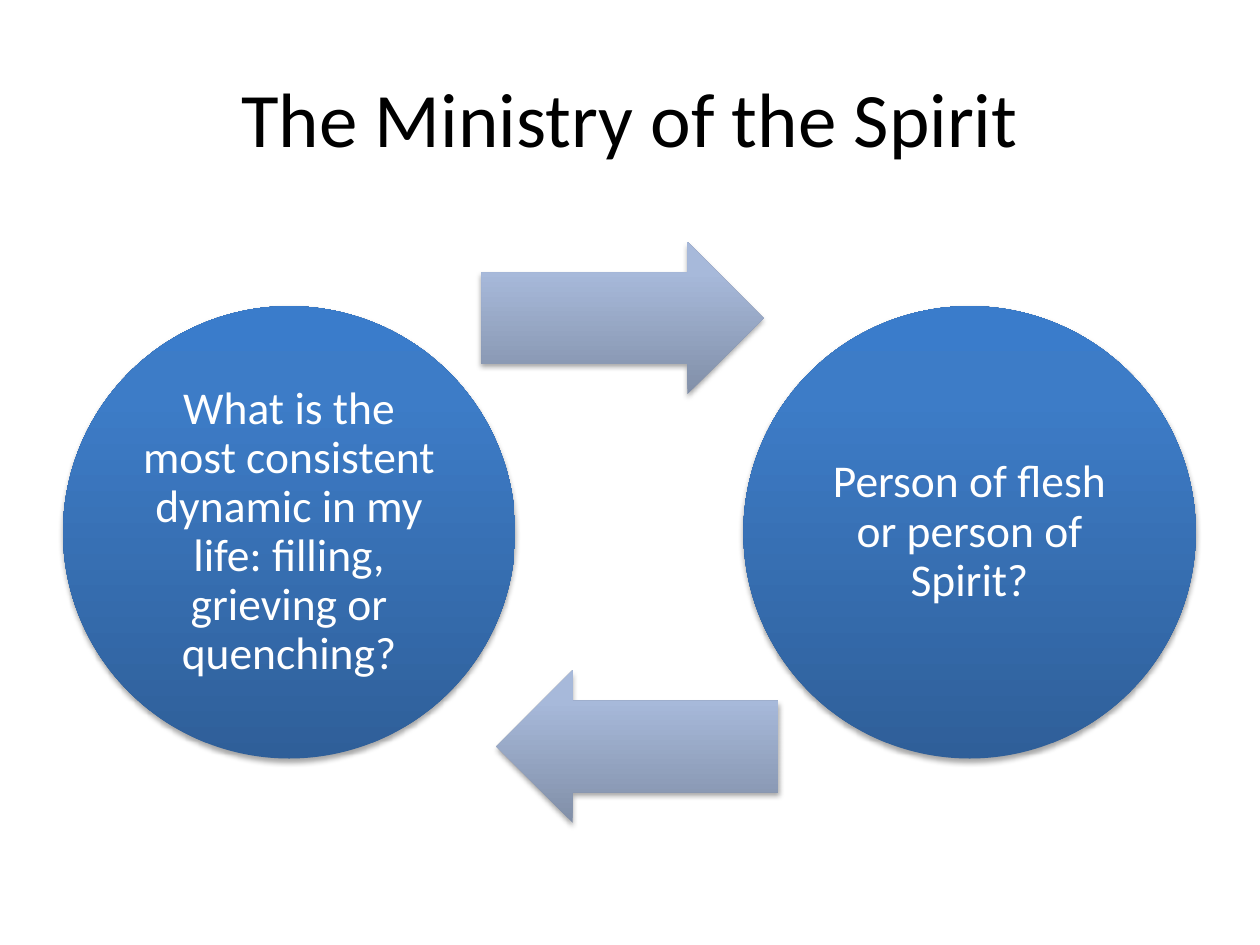
from lxml import etree
from pptx import Presentation
from pptx.dml.color import RGBColor
from pptx.enum.shapes import MSO_SHAPE
from pptx.enum.text import MSO_ANCHOR, PP_ALIGN
from pptx.oxml import parse_xml
from pptx.oxml.ns import nsdecls
from pptx.util import Inches, Pt

OVAL = MSO_SHAPE.OVAL
RIGHT_ARROW = MSO_SHAPE.RIGHT_ARROW
LEFT_ARROW = MSO_SHAPE.LEFT_ARROW
MIDDLE = MSO_ANCHOR.MIDDLE
CENTER = PP_ALIGN.CENTER

BLACK = RGBColor(0x00, 0x00, 0x00)
WHITE = RGBColor(0xFF, 0xFF, 0xFF)
# Gradient stops from bottom to top: position in percent, colour
CIRCLE_STOPS = ((0, RGBColor(0x2F, 0x5F, 0x99)),
                (80, RGBColor(0x3D, 0x7C, 0xC7)),
                (100, RGBColor(0x3A, 0x7C, 0xCB)))
ARROW_STOPS = ((0, RGBColor(0x81, 0x8F, 0xA8)),
               (80, RGBColor(0xA7, 0xB9, 0xDA)),
               (100, RGBColor(0xA7, 0xBA, 0xDC)))
FONT = "Calibri"


def style_font(paragraph, size, color):
    paragraph.alignment = CENTER
    paragraph.font.name = FONT
    paragraph.font.size = Pt(size)
    paragraph.font.color.rgb = color


def add_shaded_shape(kind, left, top, width, height, stops):
    """Add a shape with an upward gradient and a soft shadow below it."""
    shape = slide.shapes.add_shape(
        kind, Inches(left), Inches(top), Inches(width), Inches(height))
    shape.line.fill.background()
    shape.fill.gradient()
    shape.fill.gradient_angle = 90
    stop_list = shape.fill._fill._gradFill.gsLst
    for old_stop in list(stop_list):
        stop_list.remove(old_stop)
    for position, color in stops:
        stop_list.append(parse_xml(
            f'<a:gs {nsdecls("a")} pos="{position * 1000}">'
            f'<a:srgbClr val="{color}"/></a:gs>'))
    shape.shadow.inherit = False
    effects = shape._element.spPr.find("{*}effectLst")
    effects.append(etree.fromstring(
        f'<a:outerShdw {nsdecls("a")} blurRad="{Pt(3.1)}" dist="{Pt(1.8)}" '
        'dir="5400000" rotWithShape="0"><a:srgbClr val="000000">'
        '<a:alpha val="35000"/></a:srgbClr></a:outerShdw>'))
    return shape


presentation = Presentation()
presentation.slide_width = Inches(10)
presentation.slide_height = Inches(7.5)
slide = presentation.slides.add_slide(presentation.slide_layouts[5])

# Title
title = slide.shapes.title
title.left, title.top = Inches(0.5), Inches(0.3)
title.width, title.height = Inches(9), Inches(1.25)
title.text_frame.text = "The Ministry of the Spirit"
title.text_frame.vertical_anchor = MIDDLE
style_font(title.text_frame.paragraphs[0], 44, BLACK)

# Two question circles, spaced by a fixed column step
DIAMETER, FIRST_LEFT, CIRCLE_TOP, COLUMN_STEP = 3.59, 0.5, 2.43, 5.4
QUESTIONS = (
    "What is the most consistent dynamic in my life: filling, grieving or quenching?",
    "Person of flesh or person of Spirit?",
)
for column, question in enumerate(QUESTIONS):
    circle = add_shaded_shape(OVAL, FIRST_LEFT + column * COLUMN_STEP, CIRCLE_TOP,
                              DIAMETER, DIAMETER, CIRCLE_STOPS)
    frame = circle.text_frame
    frame.word_wrap = True
    frame.vertical_anchor = MIDDLE
    frame.margin_left = frame.margin_right = Inches(0.04)
    frame.margin_top = frame.margin_bottom = Inches(0.04)
    frame.text = question
    style_font(frame.paragraphs[0], 26, WHITE)
    frame.paragraphs[0].line_spacing = 0.9

# Arrows of the cycle: over to the right, back to the left
for kind, left, top in ((RIGHT_ARROW, 3.82, 1.92), (LEFT_ARROW, 3.94, 5.32)):
    arrow = add_shaded_shape(kind, left, top, 2.24, 1.21, ARROW_STOPS)
    arrow.adjustments[0] = 0.6
    arrow.adjustments[1] = 0.5

presentation.save("out.pptx")
